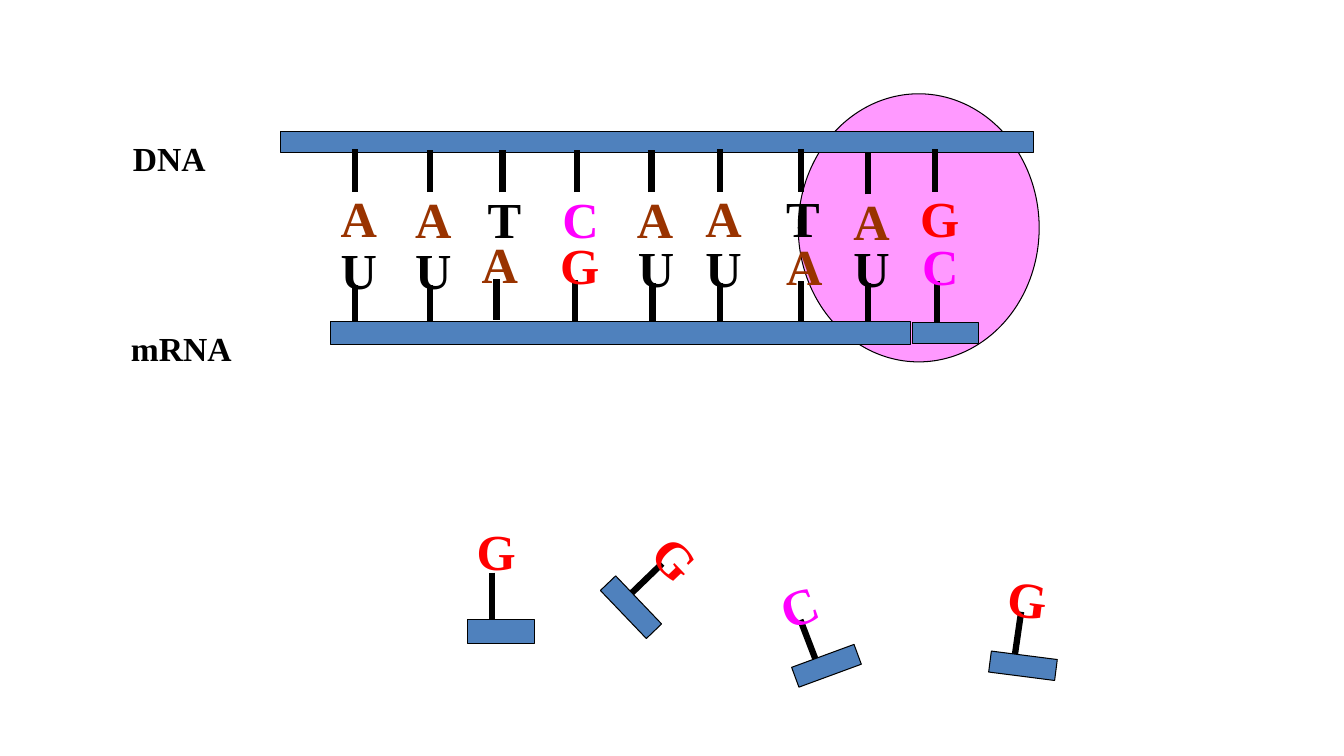
from pptx import Presentation
from pptx.dml.color import RGBColor
from pptx.enum.shapes import MSO_CONNECTOR, MSO_SHAPE
from pptx.oxml.ns import qn
from pptx.util import Pt
from lxml.etree import SubElement

BLACK = RGBColor(0x00, 0x00, 0x00)
BLUE = RGBColor(0x4F, 0x81, 0xBD)
PINK = RGBColor(0xFF, 0x99, 0xFF)
BROWN = RGBColor(0x99, 0x33, 0x00)
RED = RGBColor(0xFF, 0x00, 0x00)
PURPLE = RGBColor(0xFF, 0x00, 0xFF)
HUES = {"A": BROWN, "G": RED, "C": PURPLE, "T": BLACK, "U": BLACK}

BOX_W, BOX_H = 47.5, 50.4
STEM_X = 17.6
BLOCK_H = 15.1

deck = Presentation()
deck.slide_width, deck.slide_height = Pt(960), Pt(540)
slide = deck.slides.add_slide(deck.slide_layouts[6])


def write(text, x, y, w=BOX_W, h=BOX_H, size=36, turn=0):
    box = slide.shapes.add_textbox(Pt(x), Pt(y), Pt(w), Pt(h))
    box.rotation = turn
    frame = box.text_frame
    frame.word_wrap = True
    frame.margin_top, frame.margin_bottom = Pt(3.6 + size * 0.11), Pt(0)
    run = frame.paragraphs[0].add_run()
    run.text = text
    font = run.font
    font.name, font.size, font.bold = "Times New Roman", Pt(size), True
    font.color.rgb = HUES.get(text, BLACK)


def draw(kind, x, y, w, h, fill=BLUE, turn=0):
    shape = slide.shapes.add_shape(kind, Pt(x), Pt(y), Pt(w), Pt(h))
    shape.rotation = turn
    shape.shadow.inherit = False
    shape.fill.solid()
    shape.fill.fore_color.rgb = fill
    shape.line.color.rgb = BLACK
    shape.line.width = Pt(0.75)


# Enzyme and DNA backbone
draw(MSO_SHAPE.OVAL, 570.2, 67, 172.1, 191.5, fill=PINK)
draw(MSO_SHAPE.RECTANGLE, 200.2, 93.6, 537.8, BLOCK_H)

# Paired bases: letter, left, top
dna = [("A", 236.2, 126.2), ("A", 289.4, 126.5), ("T", 341.3, 126.7),
       ("C", 394.6, 126.5), ("A", 447.8, 126.5), ("A", 496.8, 126.2),
       ("T", 554.4, 126.2), ("A", 602.6, 128.2), ("G", 650.2, 126.2)]
mrna = [("U", 236.2, 163.4), ("U", 289.4, 163.4), ("A", 337, 159.1),
        ("G", 393.1, 159.8), ("U", 448.6, 162), ("U", 496.8, 162),
        ("A", 554.4, 160.6), ("U", 602.6, 162), ("C", 651.6, 160.6)]

# Free bases: letter, left, top, turn, stem ends, block left, top, height
free = [("G", 333.4, 364.3, 0, (351.4, 409, 351.4, 442.8), 334.1, 442.8, 16.6),
        ("G", 464.4, 372.2, 46.3, (473, 402.5, 451.4, 423.4), 427, 426.2, BLOCK_H),
        ("C", 548.6, 401.8, 339.8, (571.7, 442.8, 582.5, 470.9), 566.6, 468, BLOCK_H),
        ("G", 713.5, 398.2, 7.3, (729.4, 437, 725, 467.3), 707, 468, BLOCK_H)]

# Stems
stems = [ends for _, _, _, _, ends, _, _, _ in free]
for strand, start, end in [(dna, 10.7, -19.6), (mrna, 40.3, 69.8)]:
    for _, x, y in strand:
        stems.append((x + STEM_X, y + start, x + STEM_X, y + end))
for ends in stems:
    stem = slide.shapes.add_connector(MSO_CONNECTOR.STRAIGHT, *map(Pt, ends))
    stem.line.color.rgb = BLACK
    stem.line.width = Pt(4.5)
    SubElement(stem.element.spPr, qn("a:effectLst"))

# mRNA backbone and its newest block
draw(MSO_SHAPE.RECTANGLE, 236.2, 229.7, 414, 16.6)
draw(MSO_SHAPE.RECTANGLE, 651.6, 230.4, BOX_W, BLOCK_H)

# Letters and free blocks
for base, x, y in dna + mrna:
    write(base, x, y)
for base, x, y, turn, _, left, top, high in free:
    draw(MSO_SHAPE.RECTANGLE, left, top, BOX_W, high, turn=turn)
    write(base, x, y, turn=turn)

# Strand names
write("mRNA", 86.4, 228.2, w=101.5, h=36, size=24)
write("DNA", 87.8, 92.2, w=85, h=36, size=24)

deck.save("out.pptx")
